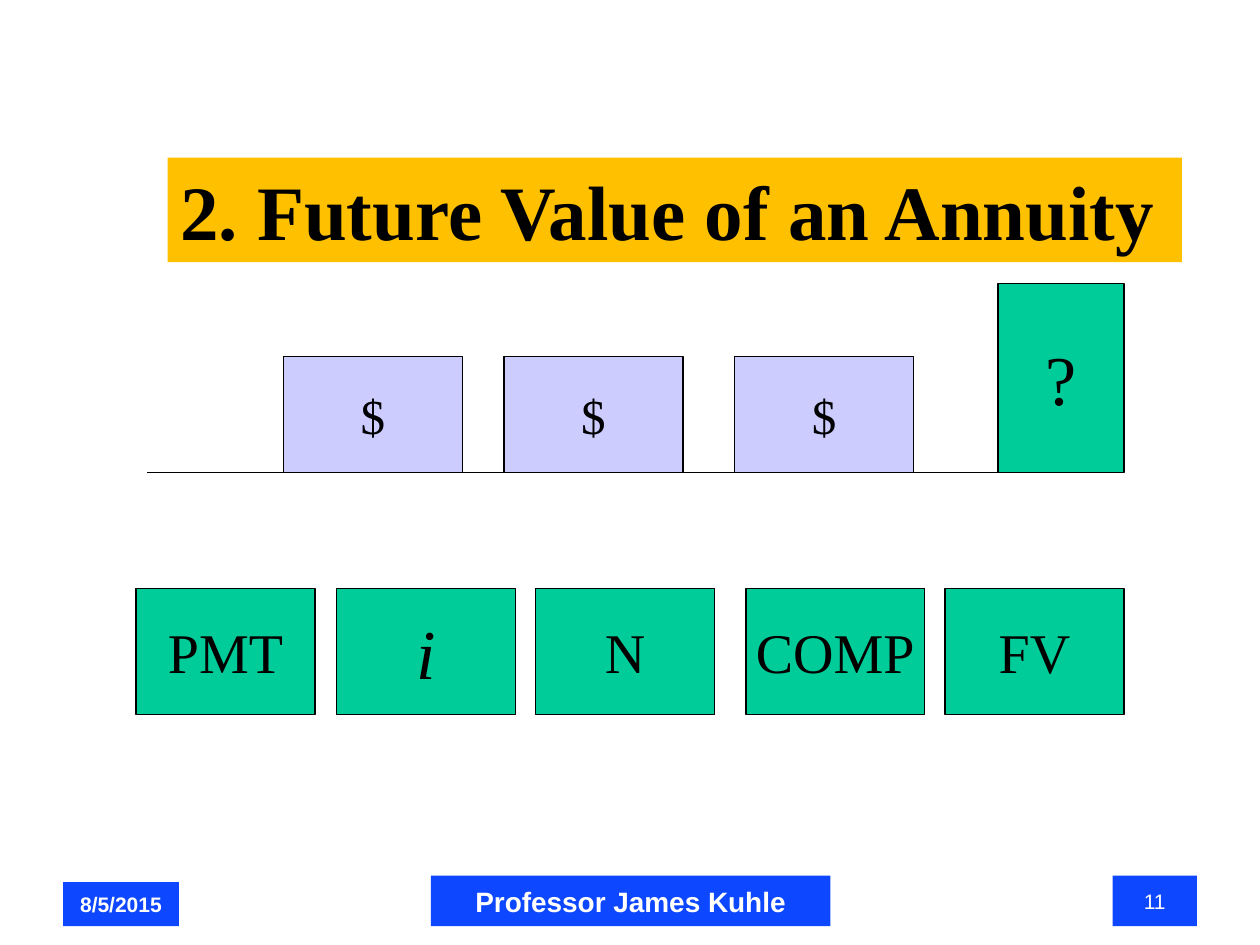
from lxml.etree import SubElement
from pptx import Presentation
from pptx.dml.color import RGBColor
from pptx.enum.shapes import MSO_CONNECTOR as Link, MSO_SHAPE as Shape
from pptx.enum.text import MSO_ANCHOR as Anchor, MSO_AUTO_SIZE as Fit, PP_ALIGN as Align
from pptx.oxml.ns import qn
from pptx.util import Inches, Pt

BLACK = RGBColor(0x00, 0x00, 0x00)
WHITE = RGBColor(0xFF, 0xFF, 0xFF)
LILAC = RGBColor(0xCC, 0xCC, 0xFF)
GREEN = RGBColor(0x00, 0xCC, 0x99)
GOLD = RGBColor(0xFF, 0xC0, 0x00)
BLUE = RGBColor(0x0D, 0x47, 0xFF)
SERIF = "Times New Roman"
SANS = "Arial"


def write(shape, text, size=32, face=SERIF, color=BLACK, bold=False,
          slant=False, align=Align.CENTER, anchor=Anchor.MIDDLE, wrap=False):
    frame = shape.text_frame
    frame.auto_size = Fit.NONE
    frame.word_wrap = wrap
    frame.vertical_anchor = anchor
    para = frame.paragraphs[0]
    para.alignment = align
    run = para.add_run()
    run.text = text
    font = run.font
    font.name, font.size = face, Pt(size)
    font.bold, font.italic = bold, slant
    font.color.rgb = color


def paint(shape, fill, line=None):
    shape.fill.solid()
    shape.fill.fore_color.rgb = fill
    if line is None:
        shape.line.fill.background()
    else:
        shape.line.color.rgb = line
        shape.line.width = Pt(0.75)


def block(slide, kind, box, fill, text, line=None, **look):
    shape = slide.shapes.add_shape(kind, *box)
    shape.shadow.inherit = False
    paint(shape, fill, line)
    write(shape, text, **look)


def add_title(slide, box):
    title = slide.shapes.title
    title.left, title.top, title.width, title.height = box
    paint(title, GOLD)
    write(title, "2. Future Value of an Annuity", size=44, bold=True,
          align=Align.LEFT, anchor=Anchor.TOP, wrap=True)


def add_flow(slide, box):
    left, top, width, height = box
    base = top + height
    wide, high = Inches(1.42), Inches(0.92)
    for shift in (1.08, 2.83, 4.66):
        spot = (left + Inches(shift), base - high, wide, high)
        block(slide, Shape.FLOWCHART_PROCESS, spot, LILAC, "$", BLACK, size=28)
    goal = Inches(1)
    spot = (left + width - goal, top, goal, height)
    block(slide, Shape.FLOWCHART_PROCESS, spot, GREEN, "?", BLACK, size=40)
    axis = slide.shapes.add_connector(
        Link.STRAIGHT, left, base, left + Inches(6.91), base)
    axis.line.color.rgb = BLACK
    axis.line.width = Pt(1)
    SubElement(axis._element.spPr, qn("a:effectLst"))


def add_keys(slide, box):
    left, top, width, height = box
    wide = Inches(1.42)
    keys = (("PMT", 0, {}), ("i", 1.59, {"size": 40, "slant": True}),
            ("N", 3.17, {}), ("COMP", 4.84, {}), ("FV", 6.42, {}))
    for text, shift, look in keys:
        spot = (left + Inches(shift), top, wide, height)
        block(slide, Shape.RECTANGLE, spot, GREEN, text, BLACK, **look)


def add_foot(slide, box):
    left, top, width, height = box
    base = top + height
    parts = (("8/5/2015", 0, 0.92, 0.35, 12, True),
             ("Professor James Kuhle", 2.92, 3.17, 0.4, 16, True),
             ("11", 8.33, 0.67, 0.4, 12, False))
    for text, shift, wide, high, size, bold in parts:
        spot = (left + Inches(shift), base - Inches(high), Inches(wide), Inches(high))
        block(slide, Shape.RECTANGLE, spot, BLUE, text, size=size, face=SANS,
              color=WHITE, bold=bold)


def area(*sides):
    return tuple(Inches(side) for side in sides)


def main():
    deck = Presentation()
    deck.slide_width, deck.slide_height = Inches(10), Inches(7.5)
    slide = deck.slides.add_slide(deck.slide_layouts[5])
    add_title(slide, area(1.33, 1.25, 8.05, 0.83))
    add_flow(slide, area(1.17, 2.25, 7.75, 1.5))
    add_keys(slide, area(1.08, 4.67, 7.84, 1))
    add_foot(slide, area(0.5, 6.95, 9, 0.4))
    deck.save("out.pptx")


if __name__ == "__main__":
    main()
